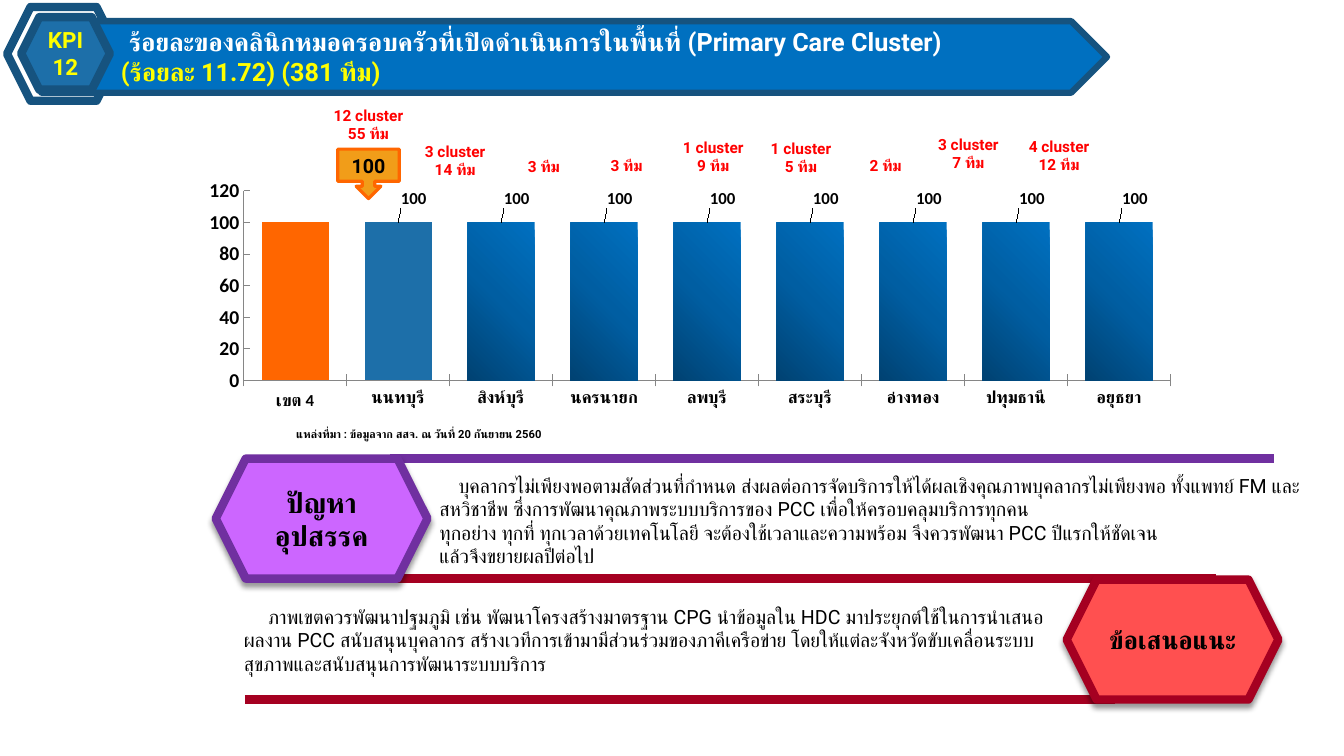
"""Build the KPI 12 slide on primary care clusters in health region 4."""
from lxml import etree
from pptx import Presentation
from pptx.chart.data import CategoryChartData
from pptx.dml.color import RGBColor
from pptx.enum.chart import XL_CHART_TYPE, XL_LABEL_POSITION, XL_TICK_MARK
from pptx.enum.shapes import MSO_CONNECTOR, MSO_SHAPE
from pptx.enum.text import MSO_ANCHOR, MSO_AUTO_SIZE, PP_ALIGN
from pptx.oxml import parse_xml
from pptx.oxml.ns import nsdecls, qn
from pptx.util import Inches, Pt

COLORS = {
    "white": "FFFFFF", "black": "000000", "yellow": "FFFF00", "label": "FF0000",
    "banner": "0070C0", "navy": "16537F", "bar": "1D6FA9", "region": "FF6600",
    "callout": "F19D19", "purple": "7030A0", "violet": "CC66FF",
    "maroon": "A50021", "coral": "FF5050", "axis": "868686",
    "deep": "004272", "middle": "005EA2",
}


def write(frame, lines, size, color, bold=True, align=PP_ALIGN.CENTER,
          anchor=MSO_ANCHOR.MIDDLE, wrap=True):
    """Fill a text frame with one paragraph per line."""
    frame.word_wrap = wrap
    frame.auto_size = MSO_AUTO_SIZE.NONE
    frame.vertical_anchor = anchor
    for number, line in enumerate(lines):
        paragraph = frame.paragraphs[0] if number == 0 else frame.add_paragraph()
        paragraph.alignment = align
        run = paragraph.add_run()
        run.text = line
        run.font.size = Pt(size)
        run.font.bold = bold
        run.font.name = "Roboto"
        run.font.color.rgb = RGBColor.from_string(COLORS[color])
        thai_font = etree.SubElement(run.font._element, qn("a:cs"))
        thai_font.set("typeface", "Roboto")


def draw(kind, box, fill, line, width):
    """Add a preset shape with a fill and an outline."""
    shape = slide.shapes.add_shape(kind, *map(Inches, box))
    shape.shadow.inherit = False
    if fill:
        shape.fill.solid()
        shape.fill.fore_color.rgb = RGBColor.from_string(COLORS[fill])
    else:
        shape.fill.background()
    shape.line.color.rgb = RGBColor.from_string(COLORS[line])
    shape.line.width = Pt(width)
    return shape


prs = Presentation()
prs.slide_width, prs.slide_height = Inches(13.33), Inches(7.5)
slide = prs.slides.add_slide(prs.slide_layouts[5])

for start, end, y, color in [(3.87, 12.64, 4.55, "purple"),
                             (3.8, 12.06, 5.74, "maroon"),
                             (2.43, 11.06, 6.94, "maroon")]:
    rule = slide.shapes.add_connector(MSO_CONNECTOR.STRAIGHT, Inches(start), Inches(y),
                                      Inches(end), Inches(y))
    rule.line.color.rgb = RGBColor.from_string(COLORS[color])
    rule.line.width = Pt(6)
    etree.SubElement(rule._element.spPr, qn("a:effectLst"))

provinces = ["เขต 4", "นนทบุรี", "สิงห์บุรี", "นครนายก", "ลพบุรี", "สระบุรี",
             "อ่างทอง", "ปทุมธานี", "อยุธยา"]
results = CategoryChartData()
results.categories = provinces
results.add_series("Series 1", [100] * len(provinces))
chart = slide.shapes.add_chart(XL_CHART_TYPE.COLUMN_CLUSTERED, Inches(1.93), Inches(0.94),
                               Inches(9.72), Inches(3.3), results).chart
chart.has_legend = False
chart.has_title = False
chart.font.size = Pt(18)
chart.font.name = "Calibri"
chart.font.color.rgb = RGBColor.from_string(COLORS["black"])

for axis, size, tick in [(chart.category_axis, 12, XL_TICK_MARK.CROSS),
                         (chart.value_axis, 14, XL_TICK_MARK.INSIDE)]:
    axis.has_major_gridlines = False
    axis.major_tick_mark = tick
    axis.minor_tick_mark = XL_TICK_MARK.NONE
    axis.tick_labels.font.size = Pt(size)
    axis.tick_labels.font.bold = True
    axis.tick_labels.font.name = "Calibri"
    axis.format.line.color.rgb = RGBColor.from_string(COLORS["axis"])
chart.value_axis.minimum_scale = 0
chart.value_axis.maximum_scale = 120
chart.value_axis.major_unit = 20

plot = chart.plots[0]
plot.gap_width = 54
plot.vary_by_categories = False
series = plot.series[0]
series.format.fill.solid()
series.format.fill.fore_color.rgb = RGBColor.from_string(COLORS["bar"])
region_fill = series.points[0].format.fill
region_fill.solid()
region_fill.fore_color.rgb = RGBColor.from_string(COLORS["region"])

stops = "".join(f'<a:gs pos="{position}"><a:srgbClr val="{COLORS[name]}"/></a:gs>'
                for position, name in [(0, "deep"), (50000, "middle"), (100000, "banner")])
for index in range(2, len(provinces)):
    bar = series.points[index].format
    bar.fill.background()
    bar_properties = series._element.xpath(f"c:dPt[c:idx/@val='{index}']/c:spPr")[0]
    bar_properties.replace(bar_properties.find(qn("a:noFill")), parse_xml(
        f'<a:gradFill {nsdecls("a")}><a:gsLst>{stops}</a:gsLst><a:path path="circle">'
        '<a:fillToRect t="100000" r="100000"/></a:path></a:gradFill>'))

value_labels = series.data_labels
value_labels.show_value = True
value_labels.font.size = Pt(12)
value_labels.font.bold = True
for index in range(1, len(provinces)):
    label = series.points[index].data_label
    label.font.size = Pt(12)
    label.font.bold = True
    label.position = XL_LABEL_POSITION.OUTSIDE_END
for label_xml in series._element.xpath("c:dLbls/c:dLbl"):
    label_xml.insert(1, parse_xml(
        f'<c:layout {nsdecls("c")}><c:manualLayout><c:x val="0.016"/><c:y val="-0.03"/>'
        '</c:manualLayout></c:layout>'))
series._element.xpath("c:dLbls")[0].insert(0, parse_xml(
    f'<c:dLbl {nsdecls("c")}><c:idx val="0"/><c:delete val="1"/></c:dLbl>'))

plot_area = chart._chartSpace.chart.plotArea
for old_layout in plot_area.findall(qn("c:layout")):
    plot_area.remove(old_layout)
plot_area.insert(0, parse_xml(
    f'<c:layout {nsdecls("c")}><c:manualLayout><c:layoutTarget val="inner"/>'
    '<c:xMode val="edge"/><c:yMode val="edge"/><c:x val="0.05"/><c:y val="0.289"/>'
    '<c:w val="0.946"/><c:h val="0.57"/></c:manualLayout></c:layout>'))

draw(MSO_SHAPE.HEXAGON, (0.07, 0.07, 1.12, 0.93), None, "navy", 6)
draw(MSO_SHAPE.PENTAGON, (0.41, 0.21, 10.57, 0.71), "banner", "navy", 4.5)
title = slide.shapes.title
title.left, title.top, title.width, title.height = map(Inches, (1.1, 0.21, 9.4, 0.71))
write(title.text_frame,
      ["ร้อยละของคลินิกหมอครอบครัวที่เปิดดำเนินการในพื้นที่ (Primary Care Cluster)",
       "(ร้อยละ 11.72) (381 ทีม)"],
      18, "white", align=PP_ALIGN.LEFT, anchor=MSO_ANCHOR.TOP)
heading, target = title.text_frame.paragraphs
heading._p.get_or_add_pPr().set("indent", str(Inches(0.08)))
target.runs[0].font.color.rgb = RGBColor.from_string(COLORS["yellow"])
slide.shapes._spTree.append(title._element)

kpi_badge = draw(MSO_SHAPE.HEXAGON, (0.21, 0.17, 0.88, 0.72), "bar", "navy", 6)
write(kpi_badge.text_frame, ["KPI", "12"], 16, "yellow")
region_score = draw(MSO_SHAPE.DOWN_ARROW_CALLOUT, (3.35, 1.48, 0.61, 0.49),
                    "callout", "region", 2.25)
write(region_score.text_frame, ["100"], 14, "black")
for badge in (kpi_badge, region_score):
    frame = badge.text_frame
    frame.margin_left = frame.margin_right = frame.margin_top = frame.margin_bottom = 0

team_counts = [
    (3.12, 1.0, ["12 cluster", "55 ทีม"]), (3.98, 1.36, ["3 cluster", "14 ทีม"]),
    (5.06, 1.51, ["3 ทีม"]), (5.88, 1.5, ["3 ทีม"]),
    (6.54, 1.32, ["1 cluster", "9 ทีม"]), (7.41, 1.33, ["1 cluster", "5 ทีม"]),
    (8.45, 1.5, ["2 ทีม"]), (9.07, 1.29, ["3 cluster", "7 ทีม"]),
    (9.97, 1.31, ["4 cluster", "12 ทีม"]),
]
for left, top, lines in team_counts:
    width, height = (1.07, 0.47) if len(lines) == 2 else (0.67, 0.29)
    count = slide.shapes.add_textbox(*map(Inches, (left, top, width, height)))
    write(count.text_frame, lines, 11, "label", anchor=MSO_ANCHOR.TOP)

data_source = slide.shapes.add_textbox(*map(Inches, (2.84, 4.19, 2.96, 0.24)))
write(data_source.text_frame, ["แหล่งที่มา : ข้อมูลจาก สสจ. ณ วันที่ 20 กันยายน 2560"],
      8, "black", align=PP_ALIGN.LEFT, anchor=MSO_ANCHOR.TOP, wrap=False)

for left, top, text, size, fill, line in [
        (2.14, 4.55, "ปัญหาอุปสรรค", 20, "violet", "purple"),
        (10.58, 5.75, "ข้อเสนอแนะ", 18, "coral", "maroon")]:
    topic = draw(MSO_SHAPE.HEXAGON, (left, top, 2.1, 1.19), fill, line, 6)
    write(topic.text_frame, [text], size, "black")
    topic._element.spPr.find(qn("a:effectLst")).append(parse_xml(
        f'<a:outerShdw {nsdecls("a")} blurRad="{Pt(4)}" dist="{Pt(3)}" dir="5400000" '
        f'rotWithShape="0"><a:srgbClr val="{COLORS["black"]}"><a:alpha val="40000"/>'
        '</a:srgbClr></a:outerShdw>'))

for box, indent, lines in [
        ((4.26, 4.65, 8.74, 1.04), 0.19, [
            "บุคลากรไม่เพียงพอตามสัดส่วนที่กำหนด ส่งผลต่อการจัดบริการให้ได้ผลเชิงคุณภาพบุคลากรไม่เพียงพอ ทั้งแพทย์ FM และสหวิชาชีพ ซึ่งการพัฒนาคุณภาพระบบบริการของ PCC เพื่อให้ครอบคลุมบริการทุกคน",
            "ทุกอย่าง ทุกที่ ทุกเวลาด้วยเทคโนโลยี จะต้องใช้เวลาและความพร้อม จึงควรพัฒนา PCC ปีแรกให้ชัดเจน",
            "แล้วจึงขยายผลปีต่อไป"]),
        ((2.32, 5.95, 8.28, 0.81), 0.24, [
            "ภาพเขตควรพัฒนาปฐมภูมิ เช่น พัฒนาโครงสร้างมาตรฐาน CPG นำข้อมูลใน HDC มาประยุกต์ใช้ในการนำเสนอผลงาน PCC สนับสนุนบุคลากร สร้างเวทีการเข้ามามีส่วนร่วมของภาคีเครือข่าย โดยให้แต่ละจังหวัดขับเคลื่อนระบบสุขภาพและสนับสนุนการพัฒนาระบบบริการ"])]:
    details = slide.shapes.add_textbox(*map(Inches, box))
    write(details.text_frame, lines, 14, "black", bold=False,
          align=PP_ALIGN.LEFT, anchor=MSO_ANCHOR.TOP)
    details.text_frame.paragraphs[0]._p.get_or_add_pPr().set("indent", str(Inches(indent)))

prs.save("out.pptx")
